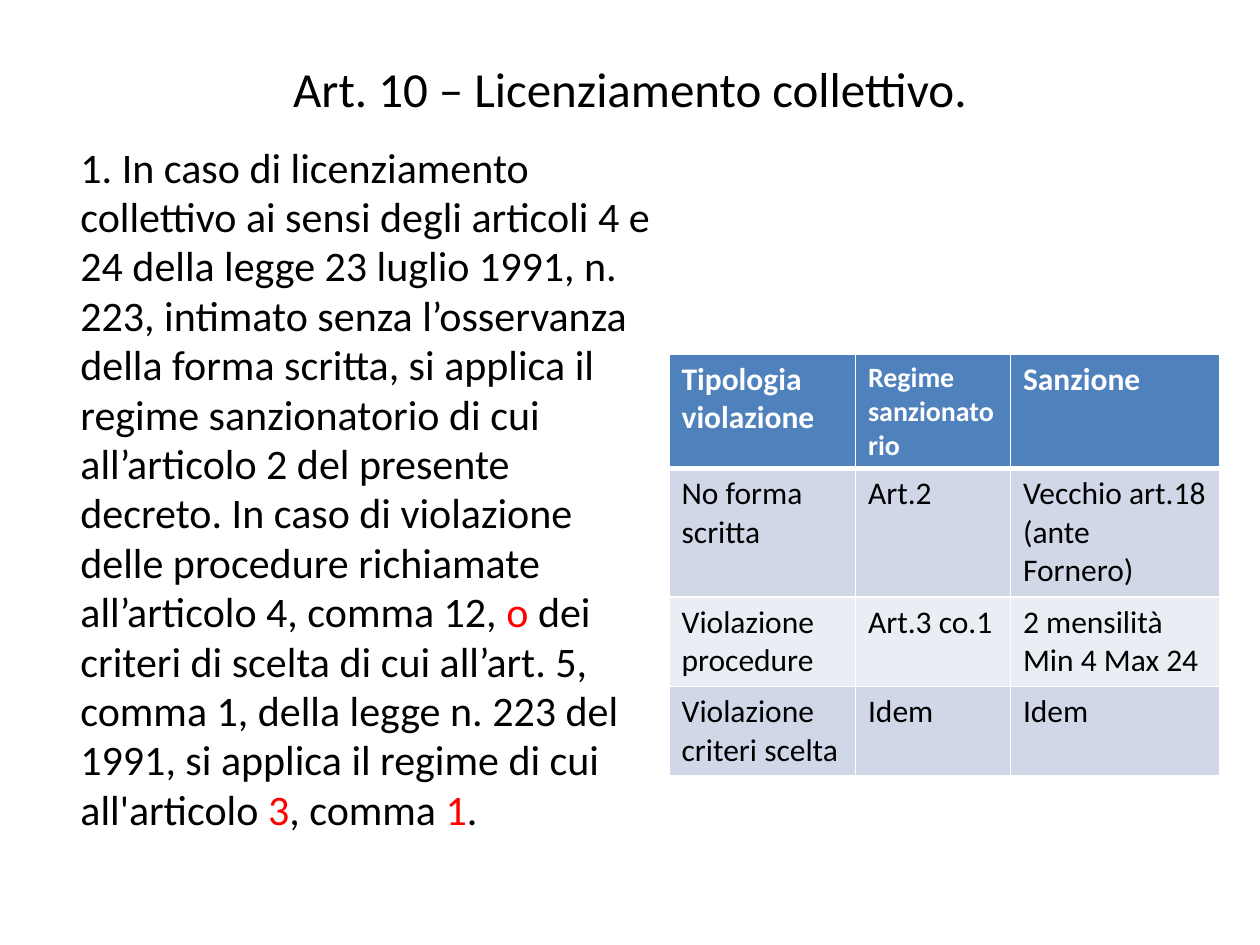
"""Build the slide on article 10, collective dismissal, with its table of sanctions."""
from lxml import etree
from pptx import Presentation
from pptx.dml.color import RGBColor
from pptx.enum import text
from pptx.oxml import ns
from pptx.util import Inches, Pt

THEME = {
    "font": "Calibri",
    "ink": "000000", "accent": "FF0000", "light": "FFFFFF",
    "header": "4F81BD", "bands": ("D0D8E8", "E9EDF4"),
    "title": 28, "body": 24, "table": 18, "narrow": 16,
    "rule": 1, "header_rule": 3,
}

TITLE = "Art. 10 – Licenziamento collettivo."
BODY = [
    ("1. In caso di licenziamento collettivo ai sensi degli articoli 4 e 24 della legge "
     "23 luglio 1991, n. 223, intimato senza l’osservanza della forma scritta, si applica "
     "il regime sanzionatorio di cui all’articolo 2 del presente decreto. In caso di "
     "violazione delle procedure richiamate all’articolo 4, comma 12, ", "ink"),
    ("o", "accent"),
    (" dei criteri di scelta di cui all’art. 5, comma 1, della legge n. 223 del 1991, "
     "si applica il regime di cui all'articolo ", "ink"),
    ("3", "accent"),
    (", comma ", "ink"),
    ("1", "accent"),
    (".", "ink"),
]
HEADERS = [("Tipologia violazione", "table"), ("Regime sanzionatorio", "narrow"),
           ("Sanzione", "table")]
ROWS = [
    ("No forma scritta", "Art.2", "Vecchio art.18 (ante Fornero)"),
    ("Violazione procedure", "Art.3 co.1", "2 mensilità\nMin 4 Max 24"),
    ("Violazione criteri scelta", "Idem", "Idem"),
]
COLUMN_WIDTHS = (1.48, 1.23, 1.66)
ROW_HEIGHTS = (0.91, 1.02, 0.71, 0.71)


def add_run(paragraph, words, size, color, bold=False):
    run = paragraph.add_run()
    run.text = words
    run.font.name = THEME["font"]
    run.font.size = Pt(THEME[size])
    run.font.bold = bold
    run.font.color.rgb = RGBColor.from_string(THEME[color])


def add_text(slide, box, runs, size):
    frame = slide.shapes.add_textbox(*map(Inches, box)).text_frame
    frame.word_wrap = True
    for words, color in runs:
        add_run(frame.paragraphs[0], words, size, color)
    return frame


def set_borders(cell, bottom, top):
    properties = cell._tc.get_or_add_tcPr()
    widths = {"lnL": THEME["rule"], "lnR": THEME["rule"], "lnT": top, "lnB": bottom}
    for position, (side, width) in enumerate(widths.items()):
        line = etree.Element(ns.qn(f"a:{side}"), w=str(Pt(width)))
        fill = etree.SubElement(line, ns.qn("a:solidFill"))
        etree.SubElement(fill, ns.qn("a:srgbClr"), val=THEME["light"])
        properties.insert(position, line)


def fill_cell(cell, words, size, color, fill, bold):
    cell.fill.solid()
    cell.fill.fore_color.rgb = RGBColor.from_string(fill)
    for number, line in enumerate(words.split("\n")):
        frame = cell.text_frame
        paragraph = frame.add_paragraph() if number else frame.paragraphs[0]
        add_run(paragraph, line, size, color, bold)


def add_sanctions(slide):
    box = (5.31, 2.81, sum(COLUMN_WIDTHS), sum(ROW_HEIGHTS))
    table = slide.shapes.add_table(len(ROW_HEIGHTS), len(COLUMN_WIDTHS),
                                   *map(Inches, box)).table
    for column, width in zip(table.columns, COLUMN_WIDTHS):
        column.width = Inches(width)
    for row, height in zip(table.rows, ROW_HEIGHTS):
        row.height = Inches(height)
    for column, (words, size) in enumerate(HEADERS):
        cell = table.cell(0, column)
        fill_cell(cell, words, size, "light", THEME["header"], True)
        set_borders(cell, THEME["header_rule"], THEME["rule"])
    for number, row in enumerate(ROWS, 1):
        top = THEME["header_rule"] if number == 1 else THEME["rule"]
        for column, words in enumerate(row):
            cell = table.cell(number, column)
            fill_cell(cell, words, "table", "ink", THEME["bands"][(number - 1) % 2], False)
            set_borders(cell, THEME["rule"], top)


def main():
    presentation = Presentation()
    presentation.slide_width, presentation.slide_height = Inches(10), Inches(7.5)
    slide = presentation.slides.add_slide(presentation.slide_layouts[6])

    title = add_text(slide, (0.5, 0.3, 9, 0.8), [(TITLE, "ink")], "title")
    title.vertical_anchor = text.MSO_ANCHOR.MIDDLE
    title.paragraphs[0].alignment = text.PP_ALIGN.CENTER

    body = add_text(slide, (0.54, 1.09, 4.62, 6.18), BODY, "body")
    body.margin_right = 0
    body.paragraphs[0].line_spacing = 0.98

    add_sanctions(slide)
    presentation.save("out.pptx")


if __name__ == "__main__":
    main()
